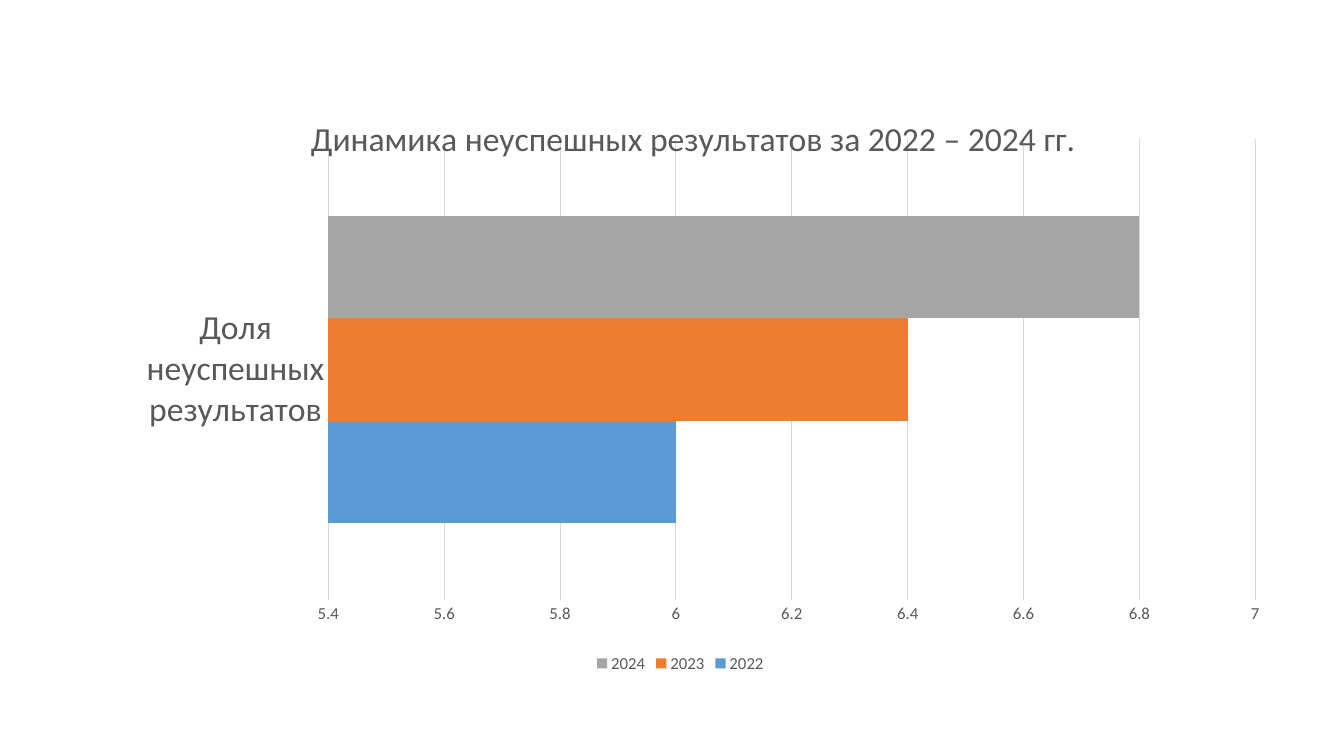
from lxml import etree
from pptx import Presentation
from pptx.chart.data import CategoryChartData
from pptx.dml.color import RGBColor
from pptx.enum.chart import XL_CHART_TYPE, XL_LEGEND_POSITION, XL_TICK_MARK
from pptx.oxml.ns import qn
from pptx.util import Cm, Pt

BAR = XL_CHART_TYPE.BAR_CLUSTERED
BOTTOM = XL_LEGEND_POSITION.BOTTOM
NO_TICK = XL_TICK_MARK.NONE

COLORS = {"text": "595959", "line": "D9D9D9",
          "2022": "5B9BD5", "2023": "ED7D31", "2024": "A5A5A5"}
RESULTS = {"2022": 6, "2023": 6.4, "2024": 6.8}
TITLE = "Динамика неуспешных результатов за 2022 – 2024 гг."


def rgb(name):
    return RGBColor.from_string(COLORS[name])


def set_layout(parent, index, **values):
    """Place a chart part by fractions of the chart area."""
    for old in parent.findall(qn("c:layout")):
        parent.remove(old)
    layout = etree.Element(qn("c:layout"))
    manual = etree.SubElement(layout, qn("c:manualLayout"))
    for tag, value in values.items():
        etree.SubElement(manual, qn(f"c:{tag}")).set("val", str(value))
    parent.insert(index, layout)


prs = Presentation()
prs.slide_width, prs.slide_height = Cm(33.87), Cm(19.05)
s = prs.slides.add_slide(prs.slide_layouts[6])

data = CategoryChartData()
data.categories = ["Доля неуспешных результатов"]
for year, share in RESULTS.items():
    data.add_series(year, [share])
chart = s.shapes.add_chart(BAR, Cm(2.36), Cm(2.01), Cm(29.57), Cm(15.06), data).chart

# Title, legend and plot area
chart.font.name = "Calibri"
chart.font.size = Pt(10)
chart.has_title = True
title = chart.chart_title
title.include_in_layout = False
p = title.text_frame.paragraphs[0]
r = p.add_run()
r.text = TITLE
chart.has_legend = True
legend = chart.legend
legend.position = BOTTOM
legend.include_in_layout = False
plot = chart.plots[0]
plot.gap_width = 150
plot.overlap = 0
plot.vary_by_categories = False
for series in plot.series:
    series.format.fill.solid()
    series.format.fill.fore_color.rgb = rgb(series.name)

# Axes
cat, val = chart.category_axis, chart.value_axis
val.minimum_scale, val.maximum_scale, val.major_unit = 5.4, 7, 0.2
val.has_major_gridlines = True
val.format.line.fill.background()
for axis in (cat, val):
    axis.major_tick_mark = axis.minor_tick_mark = NO_TICK
for line in (cat.format.line, val.major_gridlines.format.line):
    line.color.rgb = rgb("line")
    line.width = Pt(0.75)

for font, size in ((r.font, 24), (cat.tick_labels.font, 24),
                   (val.tick_labels.font, 12), (legend.font, 12)):
    for name, value in {"name": "Calibri", "size": Pt(size), "bold": False}.items():
        setattr(font, name, value)
    font.color.rgb = rgb("text")

plot_area = chart.plots[0]._element.getparent()
set_layout(plot_area, 0, layoutTarget="inner", xMode="edge", yMode="edge",
           x=0.2, y=0.1, w=0.79, h=0.77)
set_layout(title._element, 1, xMode="edge", yMode="edge", x=0.18, y=0.05)

prs.save("out.pptx")
